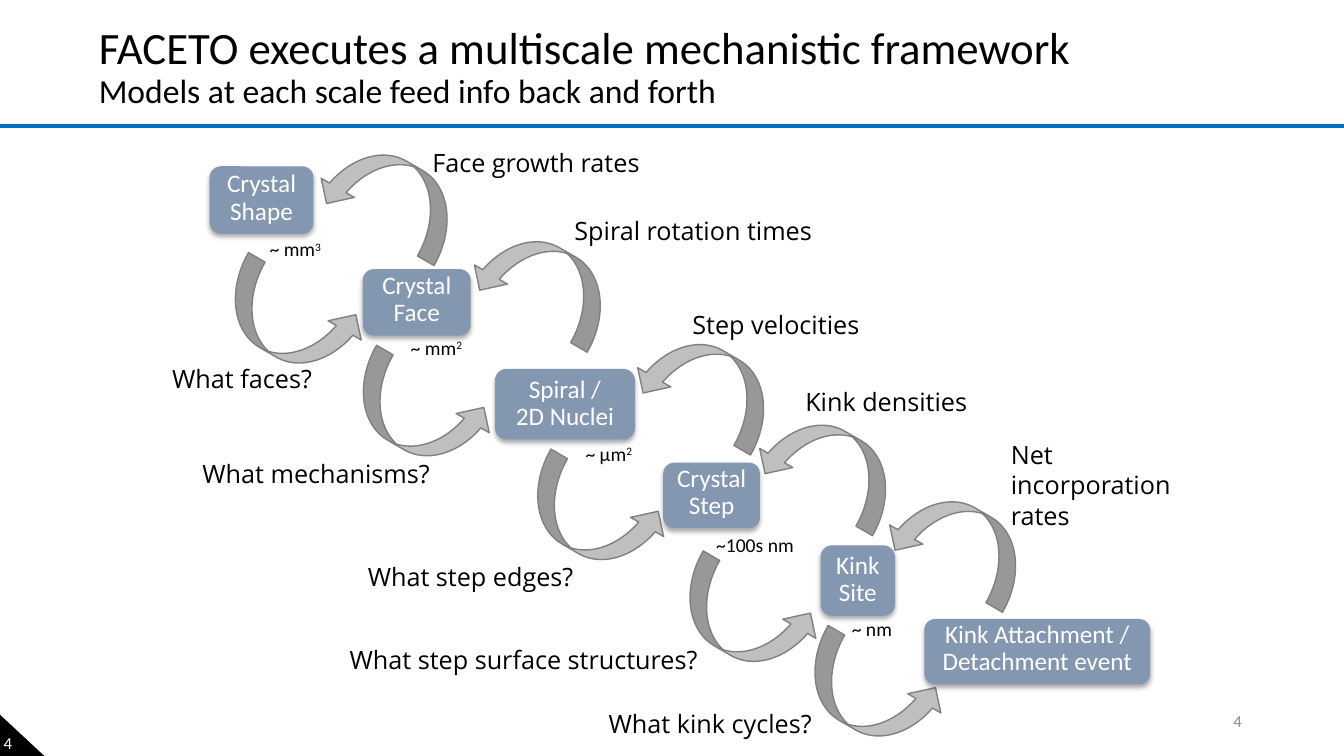
from lxml import etree
from pptx import Presentation
from pptx.dml.color import RGBColor
from pptx.enum.shapes import MSO_CONNECTOR, MSO_SHAPE
from pptx.enum.text import MSO_ANCHOR, MSO_AUTO_SIZE, PP_ALIGN
from pptx.oxml.ns import qn
from pptx.util import Inches, Pt

LEFT, CENTER, RIGHT = PP_ALIGN.LEFT, PP_ALIGN.CENTER, PP_ALIGN.RIGHT
TOP, MIDDLE, BOTTOM = MSO_ANCHOR.TOP, MSO_ANCHOR.MIDDLE, MSO_ANCHOR.BOTTOM
ROUNDED, TRIANGLE = MSO_SHAPE.ROUNDED_RECTANGLE, MSO_SHAPE.RIGHT_TRIANGLE
CURVED_ARROW = MSO_SHAPE.CURVED_RIGHT_ARROW
STRAIGHT = MSO_CONNECTOR.STRAIGHT
GROW, FIXED = MSO_AUTO_SIZE.SHAPE_TO_FIT_TEXT, MSO_AUTO_SIZE.NONE

CELL = Inches(0.1)
COLUMNS, ROWS = 133.33, 75
TITLE_ONLY = 5
ARROW_SIZE = (7.6, 14.2)
UP_TURN, DOWN_TURN = 120, 300.1

LEVELS = [
    ("Crystal Shape", (20.8, 16.5, 10.3, 6.7)),
    ("Crystal Face", (36, 26.7, 10.7, 6.6)),
    ("Spiral /\n2D Nuclei", (49.1, 36.6, 13.9, 7)),
    ("Crystal Step", (65.8, 45.9, 9.6, 6.5)),
    ("Kink Site", (81.4, 54.1, 7.4, 7)),
    ("Kink Attachment / Detachment event", (91.7, 61.4, 22.4, 6.5)),
]
SCALES = [
    ("~ mm", "3", (25.5, 22.5, 7.6, 3.9)),
    ("~ mm", "2", (39.5, 32.3, 7.6, 3.9)),
    ("~ μm", "2", (56.6, 42.8, 7.6, 3.9)),
    ("~100s nm", "", (70, 51.8, 9.8, 3.9)),
    ("~ nm", "", (82.7, 60.2, 7.6, 3.9)),
]
QUESTIONS = [
    ("What faces?", (16.1, 35.6, 16.3, 4), (25.1, 24.8)),
    ("What mechanisms?", (19.1, 45, 25.2, 4), (37.8, 34)),
    ("What step edges?", (35.5, 55.2, 23.2, 4), (55.1, 44.3)),
    ("What step surface structures?", (33.7, 63.4, 39.3, 4), (70.2, 54.4)),
    ("What kink cycles?", (59.4, 69.8, 23.3, 4), (82.6, 61.8)),
]
ANSWERS = [
    ("Face growth rates", (41.9, 14.1, 23.8, 4), (35, 12.4)),
    ("Spiral rotation times", (56, 20.9, 26.9, 4), (50.2, 21)),
    ("Step velocities", (67.7, 30.2, 19.5, 4), (66.4, 31.2)),
    ("Kink densities", (78.9, 37.8, 19.2, 4), (78.5, 39.2)),
    ("Net incorporation\nrates", (99.3, 43.1, 19.6, 10.1), (91.4, 46.8)),
]


def grid(*cells):
    """Turn grid columns and rows into lengths."""
    return [round(cell * CELL) for cell in cells]


def colour(code):
    """Return the colour of a hex string."""
    return RGBColor.from_string(code)


def write(shape, text, *, sizes=(18,), font="Calibri", ink="000000", align=LEFT,
          anchor=TOP, spacing=1, wrap=True, fit=FIXED, raised=""):
    """Fill a shape with formatted text, one paragraph per line."""
    frame = shape.text_frame
    frame.word_wrap, frame.auto_size, frame.vertical_anchor = wrap, fit, anchor
    for number, line in enumerate(text.split("\n")):
        para = frame.add_paragraph() if number else frame.paragraphs[0]
        para.alignment, para.line_spacing = align, spacing
        for part in filter(None, (line, raised)):
            span = para.add_run()
            span.text = part
            span.font.size = Pt(sizes[min(number, len(sizes) - 1)])
            span.font.name = font
            span.font.color.rgb = colour(ink)
            if part == raised:
                span.font._element.set("baseline", "30000")


def add_text(page, text, cells, **style):
    """Add a text box on the grid."""
    box = page.shapes.add_textbox(*grid(*cells))
    write(box, text, **style)


def add_block(page, kind, cells, fill, line=None):
    """Add a flat preset shape on the grid."""
    block = page.shapes.add_shape(kind, *grid(*cells))
    block.shadow.inherit = False
    block.fill.solid()
    block.fill.fore_color.rgb = colour(fill)
    if line:
        block.line.color.rgb = colour(line)
        block.line.width = Pt(1)
    else:
        block.line.fill.background()
    return block


def add_arrow(page, corner, turn):
    """Add a curved arrow between two neighbouring levels."""
    arrow = add_block(page, CURVED_ARROW, (*corner, *ARROW_SIZE), "BFBFBF", "808080")
    arrow.rotation = turn


def add_level(page, text, cells):
    """Add the box of one scale level with a soft shadow below."""
    box = add_block(page, ROUNDED, cells, "8497B0")
    effects = box._element.spPr.find(qn("a:effectLst"))
    shadow = etree.SubElement(effects, qn("a:outerShdw"), blurRad=str(Pt(3.5)),
                              dist=str(Pt(2.2)), dir="5400000", rotWithShape="0")
    shade = etree.SubElement(shadow, qn("a:srgbClr"), val="000000")
    etree.SubElement(shade, qn("a:alpha"), val="32000")
    write(box, text, ink="FFFFFF", align=CENTER, anchor=BOTTOM, spacing=0.9)


def add_rule(page, row):
    """Add the line that spans the slide below the title."""
    rule = page.shapes.add_connector(STRAIGHT, *grid(0, row, COLUMNS, row))
    rule.line.color.rgb = colour("0070C0")
    rule.line.width = Pt(3)
    etree.SubElement(rule._element.spPr, qn("a:effectLst"))


def add_corner(page, text):
    """Add the black corner with the page number."""
    corner = add_block(page, TRIANGLE, (0, 70.9, 4.4, 4.1), "000000")
    frame = corner.text_frame
    frame.margin_left = frame.margin_right = frame.margin_top = frame.margin_bottom = 0
    write(corner, text, sizes=(12,), ink="FFFFFF", anchor=BOTTOM)


def add_title(page, text, cells):
    """Place and format the title with its subtitle line."""
    title = page.shapes.title
    title.left, title.top, title.width, title.height = grid(*cells)
    write(title, text, sizes=(32, 24), spacing=0.9)


def main():
    """Build and save the slide."""
    deck = Presentation()
    deck.slide_width, deck.slide_height = grid(COLUMNS, ROWS)
    page = deck.slides.add_slide(deck.slide_layouts[TITLE_ONLY])
    add_rule(page, 12.5)
    add_corner(page, "4")
    add_text(page, "4", (94.2, 69.5, 30, 4), sizes=(12,), ink="8C8C8C",
             align=RIGHT, anchor=MIDDLE)
    add_title(page, "FACETO executes a multiscale mechanistic framework\n"
              "Models at each scale feed info back and forth", (8.8, 2.1, 115, 10.2))
    for links, turn in ((ANSWERS, UP_TURN), (QUESTIONS, DOWN_TURN)):
        for _, _, corner in links:
            add_arrow(page, corner, turn)
    for text, cells in LEVELS:
        add_level(page, text, cells)
    for text, power, cells in SCALES:
        add_text(page, text, cells, sizes=(14,), align=CENTER, anchor=BOTTOM,
                 spacing=0.9, raised=power)
    for text, cells, _ in QUESTIONS + ANSWERS:
        add_text(page, text, cells, font="Open Sans", wrap="\n" in text, fit=GROW)
    deck.save("out.pptx")


if __name__ == "__main__":
    main()
